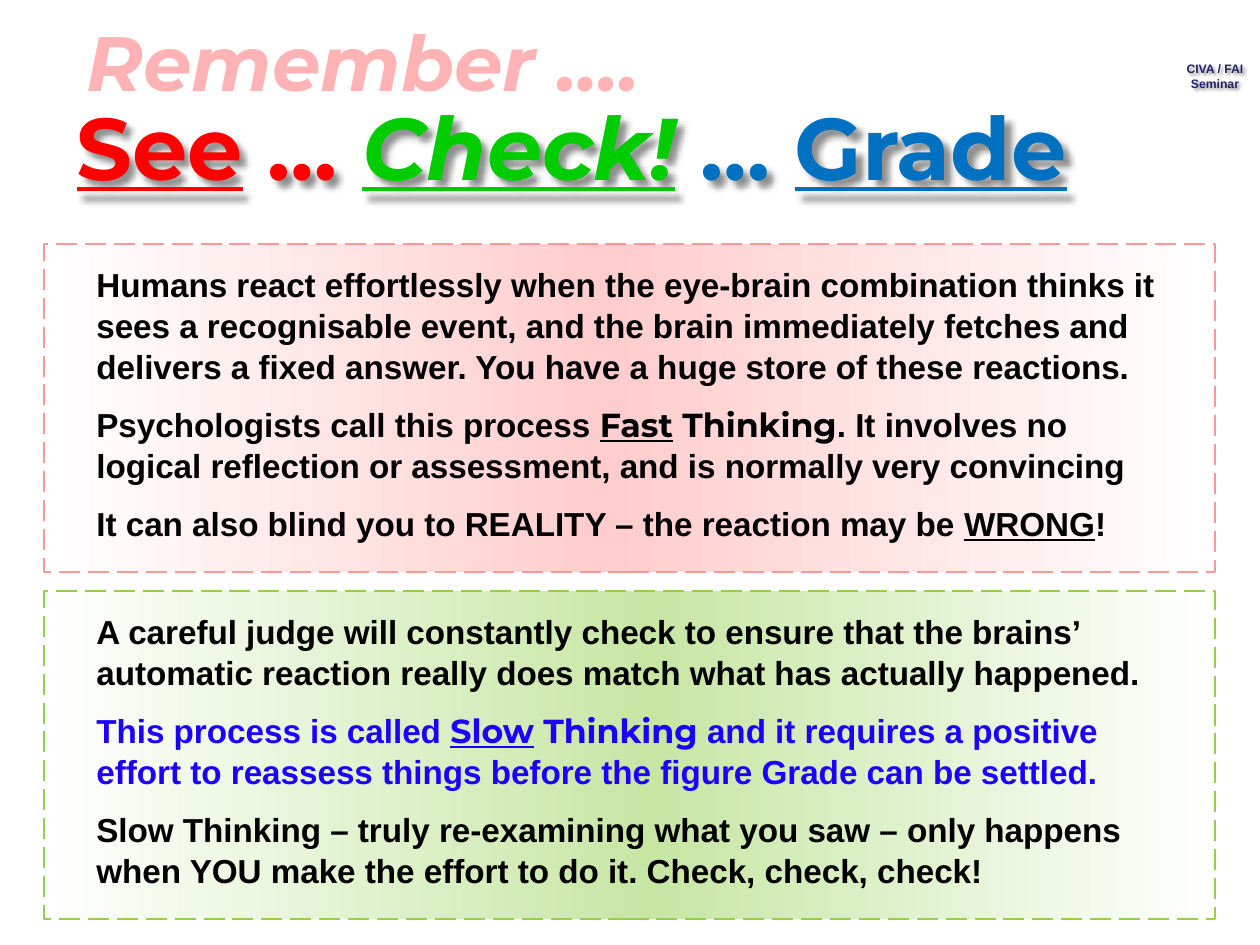
from dataclasses import dataclass

from pptx import Presentation
from pptx.dml.color import RGBColor
from pptx.enum.dml import MSO_LINE
from pptx.enum.shapes import MSO_SHAPE
from pptx.enum.text import MSO_ANCHOR, MSO_AUTO_SIZE, PP_ALIGN
from pptx.oxml import parse_xml
from pptx.oxml.ns import nsdecls
from pptx.util import Emu, Pt


@dataclass(frozen=True)
class Theme:
    """Fonts, colours and type sizes of the slide."""
    sans: str = "Arial"
    show: str = "Montserrat"
    black: str = "000000"
    white: str = "FFFFFF"
    navy: str = "222267"
    pink: str = "FFB3B5"
    red: str = "FF0000"
    green: str = "00CC00"
    blue: str = "0070C0"
    violet: str = "1B00FF"
    rose: str = "FFCDCD"
    coral: str = "FF9797"
    lime: str = "C7E6A4"
    leaf: str = "92D050"
    tag: float = 7
    body: float = 19
    lead: float = 44
    head: float = 50
    gap: float = 9.5


T = Theme()


@dataclass(frozen=True)
class Box:
    """A frame in px."""
    left: int
    top: int
    wide: int
    high: int

    def emu(self) -> list[Emu]:
        """Return the frame as four lengths."""
        return [px(n) for n in (self.left, self.top, self.wide, self.high)]


@dataclass(frozen=True)
class Bit:
    """A run of text with its look."""
    text: str
    color: str = T.black
    font: str = T.sans
    size: float = T.body
    under: bool = False
    slant: bool = False


@dataclass(frozen=True)
class Panel:
    """A dashed panel with its paragraphs."""
    top: int
    tint: str
    edge: str
    peak: int
    paras: list[list[Bit]]


def px(n: int) -> Emu:
    """Turn px into EMU at 126 px to the inch."""
    return Emu(round(n * 914400 / 126))


def write(frame, paras: list[list[Bit]], align=PP_ALIGN.LEFT, gap: float = 0, pitch: float = 1.0) -> None:
    """Write paragraphs into a text frame run by run."""
    for i, bits in enumerate(paras):
        para = frame.add_paragraph() if i else frame.paragraphs[0]
        para.alignment = align
        para.line_spacing = pitch
        para.space_before = Pt(gap if i else 0)
        for bit in bits:
            run = para.add_run()
            run.text = bit.text
            font = run.font
            font.name, font.size, font.bold = bit.font, Pt(bit.size), True
            font.underline, font.italic = bit.under, bit.slant
            font.color.rgb = RGBColor.from_string(bit.color)


def label(slide, box: Box, paras: list[list[Bit]], wrap: bool = True, anchor=MSO_ANCHOR.TOP, **look):
    """Add a text box and return it."""
    shape = slide.shapes.add_textbox(*box.emu())
    shape.text_frame.word_wrap = wrap
    shape.text_frame.vertical_anchor = anchor
    write(shape.text_frame, paras, **look)
    return shape


def shade(shape, blur: int, dist: int) -> None:
    """Give a shape a soft shadow to the lower right, sized in px."""
    shape._element.spPr.append(parse_xml(
        f'<a:effectLst {nsdecls("a")}><a:outerShdw blurRad="{px(blur)}" dist="{px(dist)}" '
        'dir="2700000" algn="tl" rotWithShape="0"><a:srgbClr val="000000">'
        '<a:alpha val="43000"/></a:srgbClr></a:outerShdw></a:effectLst>'))


def draw(slide, panel: Panel) -> None:
    """Draw a panel and its text."""
    rect = slide.shapes.add_shape(MSO_SHAPE.RECTANGLE, *Box(44, panel.top, 1171, 328).emu())
    rect.shadow.inherit = False
    stops = "".join(
        f'<a:gs pos="{pos * 1000}"><a:srgbClr val="{tone}"/></a:gs>'
        for pos, tone in ((0, T.white), (panel.peak, panel.tint), (100, T.white)))
    rect._element.spPr.prstGeom.addnext(parse_xml(
        f'<a:gradFill {nsdecls("a")} rotWithShape="1"><a:gsLst>{stops}</a:gsLst>'
        '<a:lin ang="10800000" scaled="0"/></a:gradFill>'))
    rect.line.color.rgb = RGBColor.from_string(panel.edge)
    rect.line.width = Pt(1.5)
    rect.line.dash_style = MSO_LINE.LONG_DASH
    label(slide, Box(84, panel.top + 13, 1091, 302), panel.paras, gap=T.gap, pitch=1.03)


def coin(name: str, color: str) -> list[Bit]:
    """Return the runs that name a way of thinking."""
    return [Bit(name, color, T.show, under=True), Bit(" Thinking", color, T.show)]


def head(text: str, color: str, **look) -> Bit:
    """Return a run of the title."""
    return Bit(text, color, T.show, T.head, **look)


FAST = Panel(244, T.rose, T.coral, 52, [
    [Bit("Humans react effortlessly when the eye-brain combination thinks it sees a recognisable "
         "event, and the brain immediately fetches and delivers a fixed answer. You have a huge "
         "store of these reactions.")],
    [Bit("Psychologists call this process "), *coin("Fast", T.black),
     Bit(". It involves no logical reflection or assessment, and is normally very convincing")],
    [Bit("It can also blind you to REALITY – the reaction may be "),
     Bit("WRONG", under=True), Bit("!")],
])
SLOW = Panel(591, T.lime, T.leaf, 48, [
    [Bit("A careful judge will constantly check to ensure that the brains’ automatic reaction "
         "really does match what has actually happened.")],
    [Bit("This process is called ", T.violet), *coin("Slow", T.violet),
     Bit(" and it requires a positive effort to reassess things before the figure Grade can be "
         "settled.", T.violet)],
    [Bit("Slow Thinking – truly re-examining what you saw – only happens when YOU make the "
         "effort to do it. Check, check, check!")],
])
TITLE = [
    head("See", T.red, under=True), head(" … ", T.red),
    head("Check!", T.green, under=True, slant=True), head(" … ", T.blue),
    head("Grade", T.blue, under=True),
]


def main() -> None:
    """Build the slide and save it."""
    deck = Presentation()
    deck.slide_width, deck.slide_height = px(1260), px(945)
    slide = deck.slides.add_slide(deck.slide_layouts[5])
    tag = [[Bit(text, T.navy, size=T.tag)] for text in ("CIVA / FAI", "Seminar")]
    shade(label(slide, Box(1172, 55, 86, 43), tag, wrap=False, align=PP_ALIGN.CENTER), 3, 3)
    for panel in (SLOW, FAST):
        draw(slide, panel)
    title = slide.shapes.title
    title.left, title.top, title.width, title.height = Box(64, 67, 1134, 157).emu()
    title.text_frame.auto_size = MSO_AUTO_SIZE.NONE
    title.text_frame.vertical_anchor = MSO_ANCHOR.MIDDLE
    write(title.text_frame, [TITLE])
    shade(title, 6, 8)
    lead = [[Bit("Remember ….", T.pink, T.show, T.lead, slant=True)]]
    label(slide, Box(74, 16, 684, 89), lead, anchor=MSO_ANCHOR.MIDDLE)
    deck.save("out.pptx")


if __name__ == "__main__":
    main()
